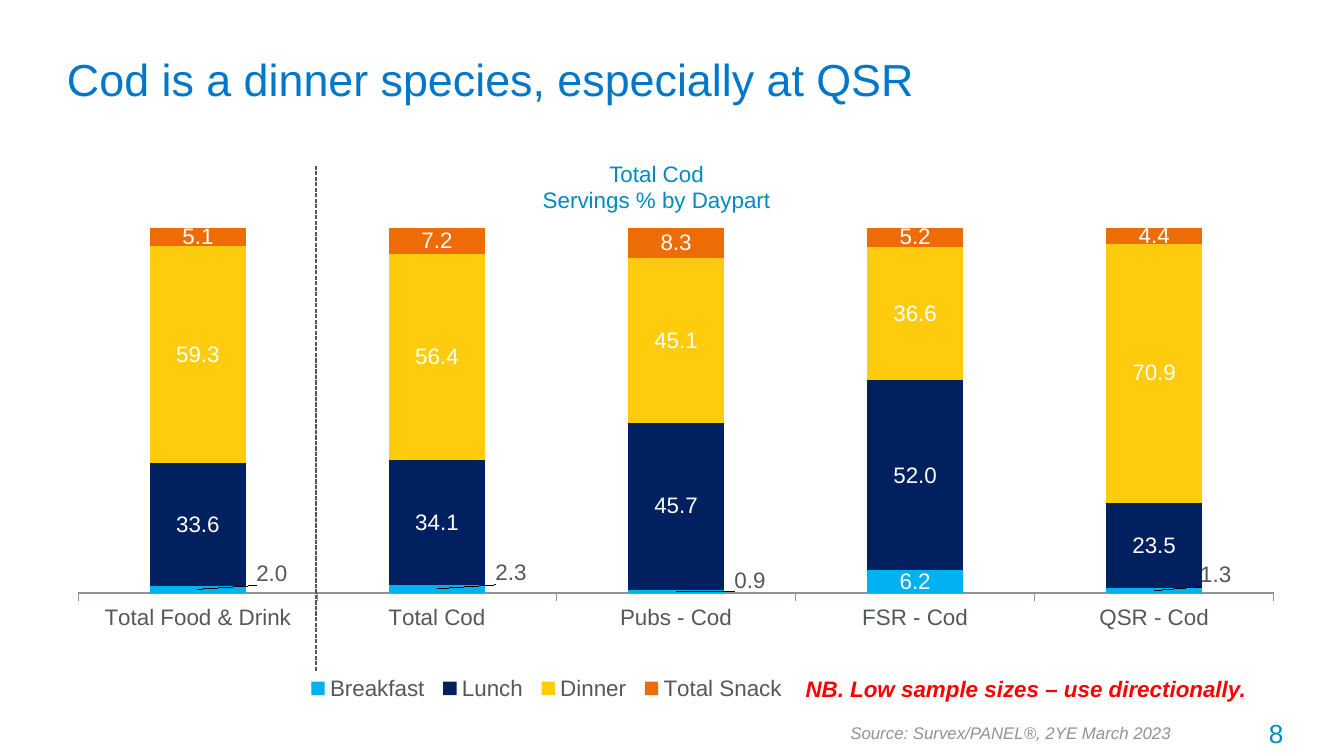
import pptx
import pptx.util
import pptx.chart.data
import pptx.dml.color
import pptx.enum.chart
import pptx.enum.dml
import pptx.enum.shapes
import pptx.enum.text
import pptx.oxml

Pt = pptx.util.Pt
ALIGN = pptx.enum.text.PP_ALIGN
ANCHOR = pptx.enum.text.MSO_ANCHOR
FONT = "Arial"
GREY = "54585A"
WHITE = "FFFFFF"
BLUE = "008AC0"

CATS = ["Total Food & Drink", "Total Cod", "Pubs - Cod", "FSR - Cod", "QSR - Cod"]
SERIES = [
    ("Breakfast", "00B0F0", GREY, [2, 2.3, 0.9, 6.2, 1.3]),
    ("Lunch", "002060", WHITE, [33.6, 34.1, 45.7, 52, 23.5]),
    ("Dinner", "FECC0C", WHITE, [59.3, 56.4, 45.1, 36.6, 70.9]),
    ("Total Snack", "ED6C05", WHITE, [5.1, 7.2, 8.3, 5.2, 4.4]),
]
SHIFTS = {0: (0.06, -0.03), 1: (0.06, -0.03), 2: (0.06, -0.02), 4: (0.05, -0.03)}
PLOT = {"x": 0.02, "y": 0.09, "w": 0.97, "h": 0.69}
LEGEND = {"x": 0.2, "y": 0.92, "w": 0.4, "h": 0.08}

TEXTS = [
    (["Cod is a dinner species, especially at QSR"],
     (28.8, 16.5, 646.5, 51), 24, "0077C8", ALIGN.LEFT, ANCHOR.MIDDLE, False, False),
    (["Total Cod", "Servings % by Daypart"],
     (283, 82, 137.5, 36), 12, BLUE, ALIGN.CENTER, ANCHOR.TOP, False, False),
    (["8"],
     (637, 381, 57.6, 24.5), 14, BLUE, ALIGN.RIGHT, ANCHOR.TOP, False, False),
    (["NB. Low sample sizes – use directionally."],
     (410.4, 358, 278.6, 21.6), 12, "FF0000", ALIGN.CENTER, ANCHOR.TOP, True, True),
    (["Source: Survex/PANEL®, 2YE March 2023"],
     (448.5, 383.8, 192.2, 18), 9, "8E9396", ALIGN.LEFT, ANCHOR.TOP, False, True),
]


def rgb(code):
    return pptx.dml.color.RGBColor.from_string(code)


def style(font, size, color, bold=False, italic=False):
    font.name = FONT
    font.size = Pt(size)
    font.color.rgb = rgb(color)
    font.bold = bold
    font.italic = italic


def layout(spots, modes):
    ns = pptx.oxml.ns.nsdecls("c")
    parts = [f'<c:{tag} val="{val}"/>' for tag, val in modes]
    parts += [f'<c:{tag} val="{val}"/>' for tag, val in spots.items()]
    return pptx.oxml.parse_xml(
        f'<c:layout {ns}><c:manualLayout>{"".join(parts)}</c:manualLayout></c:layout>')


def place(node, spots, inner=False):
    for old in node.findall(pptx.oxml.ns.qn("c:layout")):
        node.remove(old)
    modes = [("layoutTarget", "inner")] if inner else []
    modes += [("xMode", "edge"), ("yMode", "edge")]
    node.insert(0 if inner else 1, layout(spots, modes))


def add_text(slide, lines, box, size, color, align, anchor, bold, italic):
    frame = slide.shapes.add_textbox(*map(Pt, box)).text_frame
    frame.word_wrap = len(lines) == 1
    frame.vertical_anchor = anchor
    frame.text = "\n".join(lines)
    for para in frame.paragraphs:
        para.alignment = align
        style(para.font, size, color, bold, italic)


def add_bars(slide):
    data = pptx.chart.data.CategoryChartData(number_format="#,##0.0")
    data.categories = CATS
    for name, _, _, vals in SERIES:
        data.add_series(name, vals)
    chart = slide.shapes.add_chart(
        pptx.enum.chart.XL_CHART_TYPE.COLUMN_STACKED_100,
        Pt(28.8), Pt(96.5), Pt(660.2), Pt(283.7), data).chart
    style(chart.font, 12, GREY)
    chart.has_title = False
    chart.has_legend = True
    chart.legend.position = pptx.enum.chart.XL_LEGEND_POSITION.BOTTOM
    chart.legend.include_in_layout = False
    style(chart.legend.font, 12, GREY)
    chart.value_axis.visible = False
    chart.value_axis.has_major_gridlines = False
    axis = chart.category_axis
    axis.major_tick_mark = pptx.enum.chart.XL_TICK_MARK.OUTSIDE
    axis.format.line.color.rgb = rgb("8E9396")
    style(axis.tick_labels.font, 12, GREY)

    plot = chart.plots[0]
    plot.gap_width = 150
    plot.overlap = 100
    plot.vary_by_categories = False
    for bars, (_, fill, ink, _) in zip(plot.series, SERIES):
        bars.format.fill.solid()
        bars.format.fill.fore_color.rgb = rgb(fill)
        labels = bars.data_labels
        labels.show_value = True
        labels.number_format = "#,##0.0"
        labels.number_format_is_linked = False
        style(labels.font, 12, ink)

    first = plot.series[0]
    for spot in range(len(CATS)):
        style(first.points[spot].data_label.font, 12, GREY if spot in SHIFTS else WHITE)
    for spot, node in enumerate(first.data_labels._element.findall(pptx.oxml.ns.qn("c:dLbl"))):
        if spot in SHIFTS:
            node.insert(1, layout(dict(zip("xy", SHIFTS[spot])), []))

    place(chart._chartSpace.chart.plotArea, PLOT, True)
    place(chart.legend._element, LEGEND)


def add_rule(slide):
    rule = slide.shapes.add_connector(
        pptx.enum.shapes.MSO_CONNECTOR.STRAIGHT, Pt(169.2), Pt(359.3), Pt(169.2), Pt(88.6))
    rule.line.color.rgb = rgb(GREY)
    rule.line.width = Pt(0.75)
    rule.line.dash_style = pptx.enum.dml.MSO_LINE.SQUARE_DOT
    rule._element.spPr.append(
        pptx.oxml.parse_xml(f'<a:effectLst {pptx.oxml.ns.nsdecls("a")}/>'))


def main():
    deck = pptx.Presentation()
    deck.slide_width = Pt(720)
    deck.slide_height = Pt(405)
    slide = deck.slides.add_slide(deck.slide_layouts[6])
    add_bars(slide)
    add_rule(slide)
    for item in TEXTS:
        add_text(slide, *item)
    deck.save("out.pptx")


if __name__ == "__main__":
    main()
